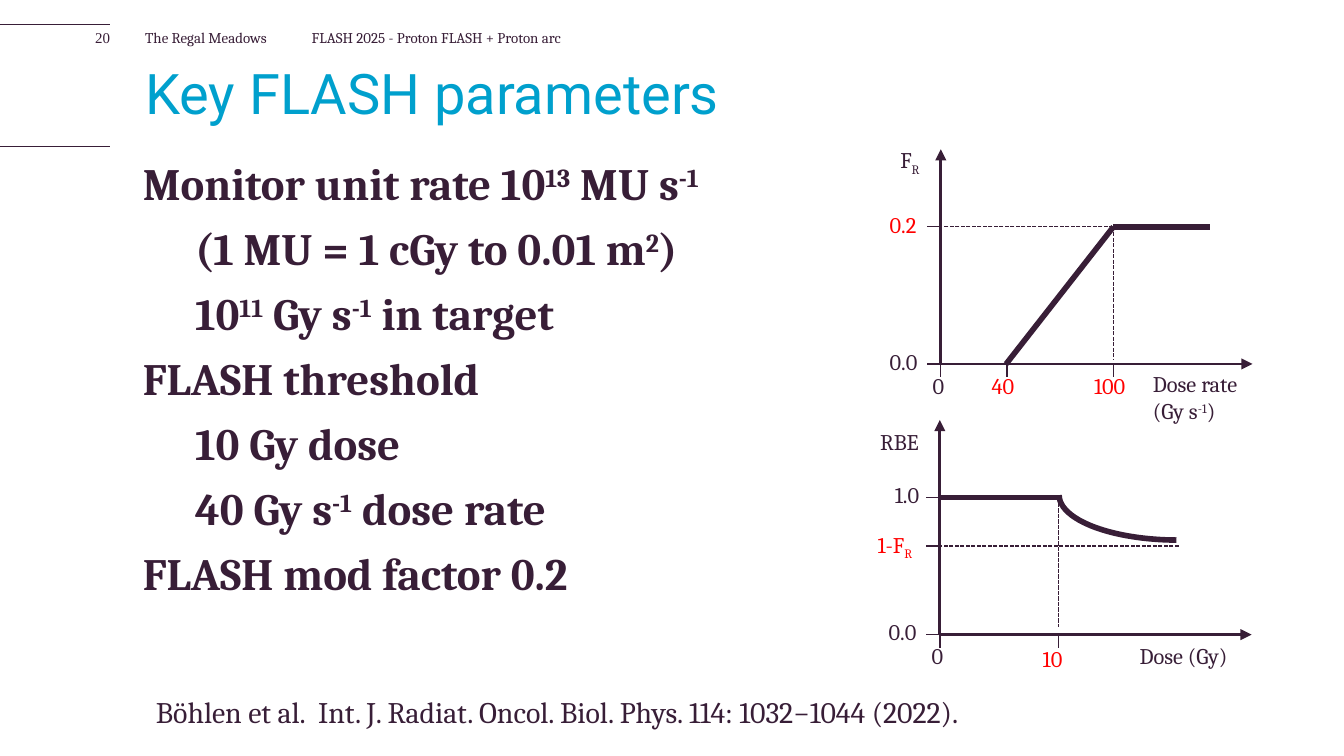
from dataclasses import dataclass

from lxml import etree
from pptx import Presentation
from pptx.dml.color import RGBColor
from pptx.enum.dml import MSO_LINE
from pptx.enum.shapes import MSO_CONNECTOR, MSO_SHAPE
from pptx.enum.text import MSO_ANCHOR, MSO_AUTO_SIZE, PP_ALIGN
from pptx.oxml.ns import qn
from pptx.util import Pt

STRAIGHT = MSO_CONNECTOR.STRAIGHT
ARC = MSO_SHAPE.ARC
DASH = MSO_LINE.SQUARE_DOT
TOP = MSO_ANCHOR.TOP
FIT = MSO_AUTO_SIZE.SHAPE_TO_FIT_TEXT
NO_FIT = MSO_AUTO_SIZE.NONE
LEFT, RIGHT = PP_ALIGN.LEFT, PP_ALIGN.RIGHT


@dataclass(frozen=True)
class Theme:
    ink: RGBColor = RGBColor(0x38, 0x1E, 0x37)
    accent: RGBColor = RGBColor(0x00, 0xA0, 0xCD)
    key: RGBColor = RGBColor(0xFF, 0x00, 0x00)
    serif: str = "Cambria"
    sans: str = "Roboto"
    number: str = "Times New Roman"
    header: float = 8
    label: float = 12
    citation: float = 16
    body: float = 24
    title: float = 30
    hairline: float = 0.31
    thin: float = 0.75
    axis: float = 1.5
    curve: float = 3


THEME = Theme()
LABEL_HEIGHT = 21.6
TICK = 7.2

BODY = [
    (0, "Monitor unit rate 10^13^ MU s^-1^"),
    (1, "(1 MU = 1 cGy to 0.01 m^2^)"),
    (1, "10^11^ Gy s^-1^ in target"),
    (0, "FLASH threshold"),
    (1, "10 Gy dose"),
    (1, "40 Gy s^-1^ dose rate"),
    (0, "FLASH mod factor 0.2"),
]


def write(paragraph, text, size, color=THEME.ink, font=THEME.serif, bold=False):
    """Fill a paragraph; ^x^ marks a superscript and _x_ a subscript."""
    marker, baseline = ("_", "-25000") if "_" in text else ("^", "30000")
    for index, part in enumerate(text.split(marker)):
        if part:
            run = paragraph.add_run()
            run.text = part
            if index % 2:
                run._r.get_or_add_rPr().set("baseline", baseline)
    paragraph.font.name = font
    paragraph.font.size = Pt(size)
    paragraph.font.bold = bold
    paragraph.font.color.rgb = color


def remove_margins(frame, right=0):
    frame.margin_left = frame.margin_top = frame.margin_bottom = 0
    frame.margin_right = Pt(right)


def add_text(shapes, left, top, width, height):
    frame = shapes.add_textbox(Pt(left), Pt(top), Pt(width), Pt(height)).text_frame
    frame.word_wrap = True
    frame.vertical_anchor = TOP
    return frame


def add_label(shapes, left, top, width, *lines, color=THEME.ink, size=THEME.label):
    frame = add_text(shapes, left, top, width, LABEL_HEIGHT * len(lines))
    frame.word_wrap = False
    frame.auto_size = FIT
    for index, line in enumerate(lines):
        paragraph = frame.add_paragraph() if index else frame.paragraphs[0]
        write(paragraph, line, size, color)


def add_line(shapes, x1, y1, x2, y2, width=THEME.thin, dashed=False, arrow=False):
    line = shapes.add_connector(STRAIGHT, Pt(x1), Pt(y1), Pt(x2), Pt(y2))
    line.line.color.rgb = THEME.ink
    line.line.width = Pt(width)
    if dashed:
        line.line.dash_style = DASH
    if arrow:
        etree.SubElement(line.line._get_or_add_ln(), qn("a:tailEnd"), type="triangle")
    etree.SubElement(line._element.spPr, qn("a:effectLst"))


def add_axes(shapes, x, y):
    """Arrowed axes from the origin, with the zero ticks and labels."""
    add_line(shapes, x, y, x, y - 115, THEME.axis, arrow=True)
    add_line(shapes, x, y, x + 167, y, THEME.axis, arrow=True)
    add_x_tick(shapes, x, y)
    add_y_tick(shapes, x, y)
    add_label(shapes, x - 34.5, y - 12.2, 32.4, "0.0")
    add_label(shapes, x - 11.5, y + 0.7, 22.3, "0")


def add_x_tick(shapes, x, y):
    add_line(shapes, x, y, x, y + TICK)


def add_y_tick(shapes, x, y):
    add_line(shapes, x, y, x - TICK, y)


def add_dose_rate_graph(slide):
    shapes = slide.shapes.add_group_shape().shapes
    x, y = 504, 195
    threshold, full, plateau = x + 35.5, x + 92.5, y - 73.5
    add_axes(shapes, x, y)
    add_line(shapes, threshold - 0.5, y, full, plateau, THEME.curve)
    add_line(shapes, full, plateau, x + 144, plateau, THEME.curve)
    add_line(shapes, full, plateau, x + 1.5, plateau, dashed=True)
    add_line(shapes, full, plateau, full, y - 2, dashed=True)
    add_y_tick(shapes, x, plateau)
    for tick in (threshold, full):
        add_x_tick(shapes, tick, y)
    add_label(shapes, 469.5, 109.5, 32.4, "0.2", color=THEME.key)
    add_label(shapes, 475.2, 75, 26, "F_R_")
    add_label(shapes, 524.2, 196, 28.8, "40", color=THEME.key)
    add_label(shapes, 579, 196, 34.6, "100", color=THEME.key)
    add_label(shapes, 610.6, 195, 64.8, "Dose rate", "(Gy s^-1^)")


def add_dose_graph(slide):
    shapes = slide.shapes.add_group_shape().shapes
    x, y = 503.5, 340
    threshold, unity, floor = x + 63.5, y - 73.5, y - 47.5
    add_axes(shapes, x, y)
    add_line(shapes, x, unity, threshold, unity, THEME.curve)
    add_decay(shapes, threshold + 0.4, 241.2, 127.4, 48.2)
    add_line(shapes, x + 128, floor, x, floor, dashed=True)
    add_line(shapes, threshold, unity, threshold, y - 4, dashed=True)
    for level in (unity, floor):
        add_y_tick(shapes, x, level)
    add_x_tick(shapes, threshold, y)
    add_label(shapes, 472.3, 254.2, 30.2, "1.0")
    add_label(shapes, 464.4, 226, 38.9, "RBE")
    add_label(shapes, 463, 280.8, 37.4, "1-F_R_", color=THEME.key)
    add_label(shapes, 551.5, 342, 27.4, "10", color=THEME.key)
    add_label(shapes, 603.4, 340.6, 67.7, "Dose (Gy)")


def add_decay(shapes, left, top, width, height):
    arc = shapes.add_shape(ARC, Pt(left), Pt(top), Pt(width), Pt(height))
    arc.adjustments[0], arc.adjustments[1] = 163.16, 0
    frame = arc._element.spPr.find(qn("a:xfrm"))
    frame.set("flipH", "1")
    frame.set("flipV", "1")
    arc.shadow.inherit = False
    arc.fill.background()
    arc.line.color.rgb = THEME.ink
    arc.line.width = Pt(THEME.curve)


def add_header(slide):
    for y in (13, 78.2):
        add_line(slide.shapes, 0, y, 59, y, THEME.hairline)
    for left, width, text, font, align in (
        (77.8, 89.3, "The Regal Meadows", THEME.serif, LEFT),
        (167, 464.4, "FLASH 2025 - Proton FLASH + Proton arc", THEME.serif, LEFT),
        (29.5, 29.5, "20", THEME.number, RIGHT),
    ):
        frame = add_text(slide.shapes, left, 15.1, width, 15)
        remove_margins(frame)
        frame.paragraphs[0].alignment = align
        write(frame.paragraphs[0], text, THEME.header, font=font)


def set_title(slide, text):
    title = slide.shapes.title
    title.left, title.top, title.width, title.height = Pt(77.8), Pt(35.3), Pt(606), Pt(48.2)
    frame = title.text_frame
    remove_margins(frame)
    frame.vertical_anchor = TOP
    frame.auto_size = NO_FIT
    paragraph = frame.paragraphs[0]
    paragraph.alignment = LEFT
    paragraph.line_spacing = Pt(31.9)
    write(paragraph, text, THEME.title, THEME.accent, THEME.sans)


def add_body(slide):
    frame = add_text(slide.shapes, 76.5, 83.5, 384.5, 270.7)
    remove_margins(frame, right=6)
    for index, (level, text) in enumerate(BODY):
        paragraph = frame.add_paragraph() if index else frame.paragraphs[0]
        paragraph._p.get_or_add_pPr().set("marL", str(Pt(28 * level)))
        paragraph.space_before = Pt(6 if index else 0)
        write(paragraph, text, THEME.body, bold=True)


def main():
    presentation = Presentation()
    presentation.slide_width, presentation.slide_height = Pt(720), Pt(405)
    slide = presentation.slides.add_slide(presentation.slide_layouts[5])
    add_header(slide)
    set_title(slide, "Key FLASH parameters")
    add_body(slide)
    add_dose_rate_graph(slide)
    add_dose_graph(slide)
    add_label(slide.shapes, 76.5, 368, 522.7,
              "Böhlen et al.  Int. J. Radiat. Oncol. Biol. Phys. 114: 1032−1044 (2022).",
              size=THEME.citation)
    presentation.save("out.pptx")


if __name__ == "__main__":
    main()
